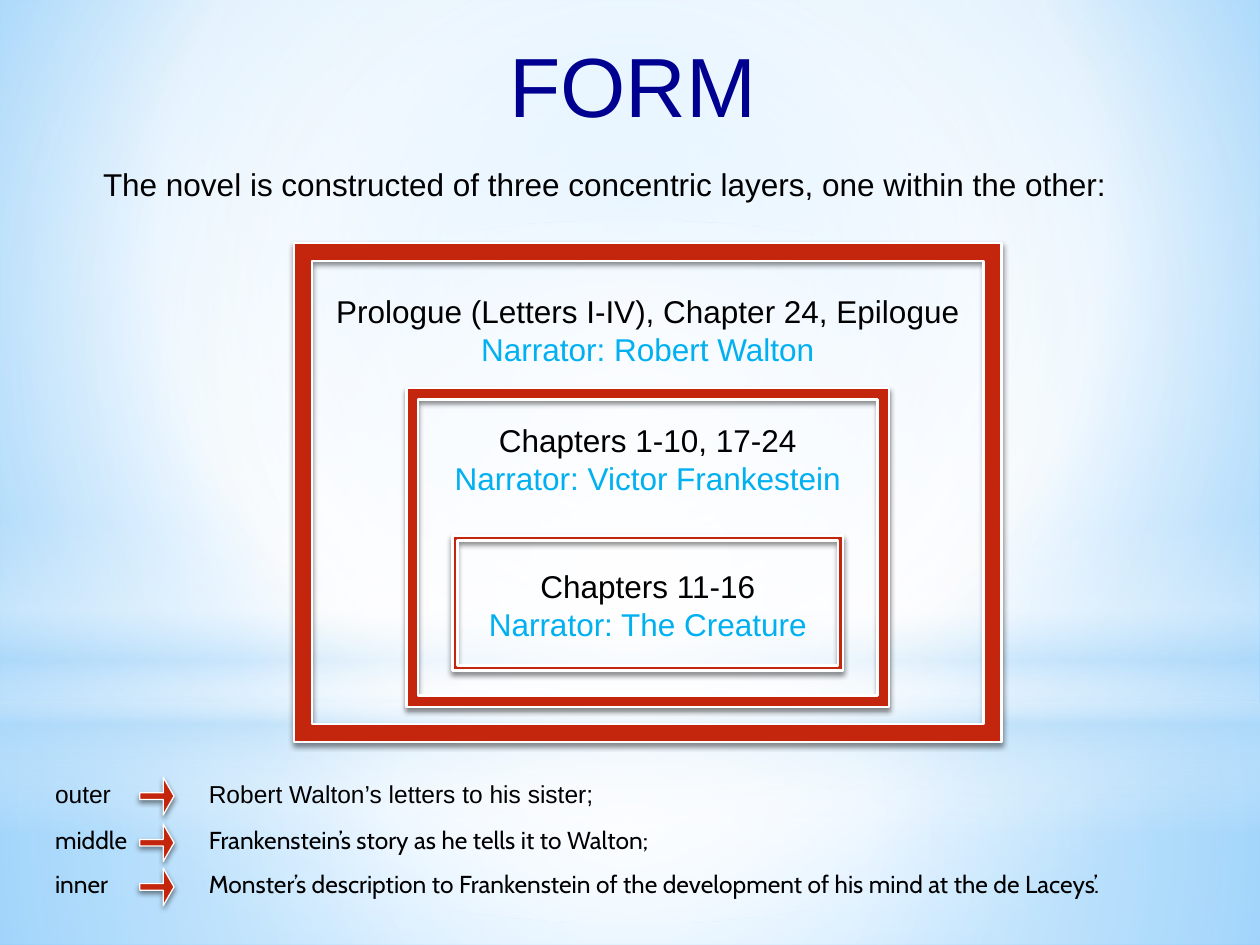
from lxml import etree
from pptx import Presentation
from pptx.dml.color import RGBColor
from pptx.enum.shapes import MSO_SHAPE as SHAPE
from pptx.enum.text import MSO_ANCHOR as ANCHOR, PP_ALIGN as ALIGN
from pptx.oxml import parse_xml
from pptx.oxml.ns import nsdecls, qn
from pptx.util import Cm, Pt

# Content
TITLE = "FORM"
INTRO = "The novel is constructed of three concentric layers, one within the other:"
# Layers, inner to outer: chapters, narrator, text top, text width, frame top, width, height
LAYERS = [
    ("Chapters 11-16", "Narrator: The Creature", 11.3, 7.21, 10.8, 7.87, 2.72),
    ("Chapters 1-10, 17-24", "Narrator: Victor Frankestein", 8.36, 10.26, 7.82, 9.73, 6.43),
    ("Prologue (Letters I-IV), Chapter 24, Epilogue", "Narrator: Robert Walton",
     5.77, 13.79, 4.9, 14.27, 10.06),
]
LEGEND = [
    ("outer", "Robert Walton’s letters to his sister;", "Arial", 15.57),
    ("middle", "Frankenstein’s story as he tells it to Walton;", "Cabin", 16.51),
    ("inner", "Monster’s description to Frankenstein of the development of his mind "
              "at the de Laceys’.", "Cabin", 17.4),
]

# Backdrop: stops are (position %, colour, opacity %); focus is left, top, right, bottom %
WHITE, SKY = "FFFFFF", "B4DCFA"
CENTRE = (50, 50, 50, 50)
PAGE = ([(0, "9ED5FF", 100), (60, WHITE, 100), (100, "5BB9FF", 100)], (20, 10, 20, 60))
BACKDROP = [
    (SHAPE.RECTANGLE, (0, 14.17, 25.4, 4.88),
     [(0, WHITE, 91), (37, WHITE, 76), (100, SKY, 79)], CENTRE),
    (SHAPE.RECTANGLE, (0, 0, 25.4, 14.17),
     [(0, WHITE, 89), (48, WHITE, 62), (100, SKY, 79)], CENTRE),
    (SHAPE.RECTANGLE, (0, 10.46, 25.4, 6.35),
     [(0, WHITE, 0), (29, WHITE, 30), (45, SKY, 40), (55, WHITE, 26),
      (65, SKY, 60), (100, WHITE, 0)], None),
    (SHAPE.OVAL, (0, 4.45, 25.4, 14.17), [(0, WHITE, 100), (56, WHITE, 0)], CENTRE),
]

BLACK, NAVY, CYAN, RED = "000000", "000090", "00B0F0", "C3260C"
MIDDLE = 13.06  # shared centre line of the layers


def rgb(value):
    return RGBColor.from_string(value)


def cm(box):
    return [Cm(v) for v in box]


def set_gradient(owner, stops, focus):
    """Replace the solid fill of a shape or slide background by a gradient."""
    grad = parse_xml(f'<a:gradFill {nsdecls("a")} rotWithShape="1"><a:gsLst/></a:gradFill>')
    for pos, color, opacity in stops:
        gs = etree.SubElement(grad[0], qn("a:gs"), pos=str(pos * 1000))
        clr = etree.SubElement(gs, qn("a:srgbClr"), val=color)
        if opacity < 100:
            etree.SubElement(clr, qn("a:alpha"), val=str(opacity * 1000))
    if focus:
        shade = etree.SubElement(grad, qn("a:path"))
        shade.set("path", "circle")
        etree.SubElement(shade, qn("a:fillToRect"),
                         {k: str(v * 1000) for k, v in zip("ltrb", focus)})
    else:
        etree.SubElement(grad, qn("a:lin"), ang="5400000", scaled="0")
    solid = owner.xpath(".//a:solidFill")[0]
    solid.getparent().replace(solid, grad)


def add_red_shape(s, kind, box, adjustments, line_width):
    sp = s.shapes.add_shape(kind, *cm(box))
    for i, value in enumerate(adjustments):
        sp.adjustments[i] = value
    sp.fill.solid()
    sp.fill.fore_color.rgb = rgb(RED)
    sp.line.color.rgb = rgb(WHITE)
    sp.line.width = Pt(line_width)
    sp.shadow.inherit = False
    effects = sp.element.spPr.find(qn("a:effectLst"))
    shadow = etree.SubElement(effects, qn("a:outerShdw"), blurRad=str(Pt(3.1)),
                              dist=str(Pt(1.8)), dir="5400000", rotWithShape="0")
    clr = etree.SubElement(shadow, qn("a:srgbClr"), val=BLACK)
    etree.SubElement(clr, qn("a:alpha"), val="45000")


def write(tf, lines, align, size, font="Arial"):
    tf.word_wrap = True
    for i, (text, color) in enumerate(lines):
        p = tf.paragraphs[0] if i == 0 else tf.add_paragraph()
        p.alignment = align
        r = p.add_run()
        r.text = text
        for name, value in {"name": font, "size": Pt(size), "bold": False}.items():
            setattr(r.font, name, value)
        r.font.color.rgb = rgb(color)


def add_text(s, box, lines, align, size, font="Arial"):
    write(s.shapes.add_textbox(*cm(box)).text_frame, lines, align, size, font)


def main():
    prs = Presentation()
    prs.slide_width, prs.slide_height = Cm(25.4), Cm(19.05)
    s = prs.slides.add_slide(prs.slide_layouts[5])

    # Background and soft light
    s.background.fill.solid()
    s.background.fill.fore_color.rgb = rgb(WHITE)
    set_gradient(s.element, *PAGE)
    title = s.shapes.title
    for kind, box, stops, focus in BACKDROP:
        sp = s.shapes.add_shape(kind, *cm(box))
        sp.fill.solid()
        sp.fill.fore_color.rgb = rgb(WHITE)
        sp.line.fill.background()
        sp.shadow.inherit = False
        set_gradient(sp.element, stops, focus)
        title.element.addprevious(sp.element)

    # Title and introduction
    title.left, title.top, title.width, title.height = cm((0.86, 0.38, 23.67, 2.82))
    tf = title.text_frame
    for name, value in {"vertical_anchor": ANCHOR.TOP, "margin_top": Cm(0.3),
                        "margin_left": Cm(0.38)}.items():
        setattr(tf, name, value)
    write(tf, [(TITLE, NAVY)], ALIGN.CENTER, 48)
    add_text(s, (1.14, 3.2, 22.1, 1.02), [(INTRO, BLACK)], ALIGN.CENTER, 18)

    # Concentric layers
    for chapters, narrator, text_top, text_w, top, w, h in LAYERS:
        add_text(s, (MIDDLE - text_w / 2, text_top, text_w, 1.8),
                 [(chapters, BLACK), (narrator, CYAN)], ALIGN.CENTER, 18)
        add_red_shape(s, SHAPE.FRAME, (MIDDLE - w / 2, top, w, h), [0.036], 1.5)

    # Legend rows
    for label, meaning, font, top in LEGEND:
        add_text(s, (0.86, top, 2.18, 0.86), [(label, BLACK)], ALIGN.LEFT, 14, font)
        add_red_shape(s, SHAPE.RIGHT_ARROW, (2.82, top + 0.1, 0.69, 0.76),
                      [0.174, 0.318], 0.75)
        add_text(s, (3.96, top, 21.4, 0.86), [(meaning, BLACK)], ALIGN.LEFT, 14, font)

    prs.save("out.pptx")


if __name__ == "__main__":
    main()
